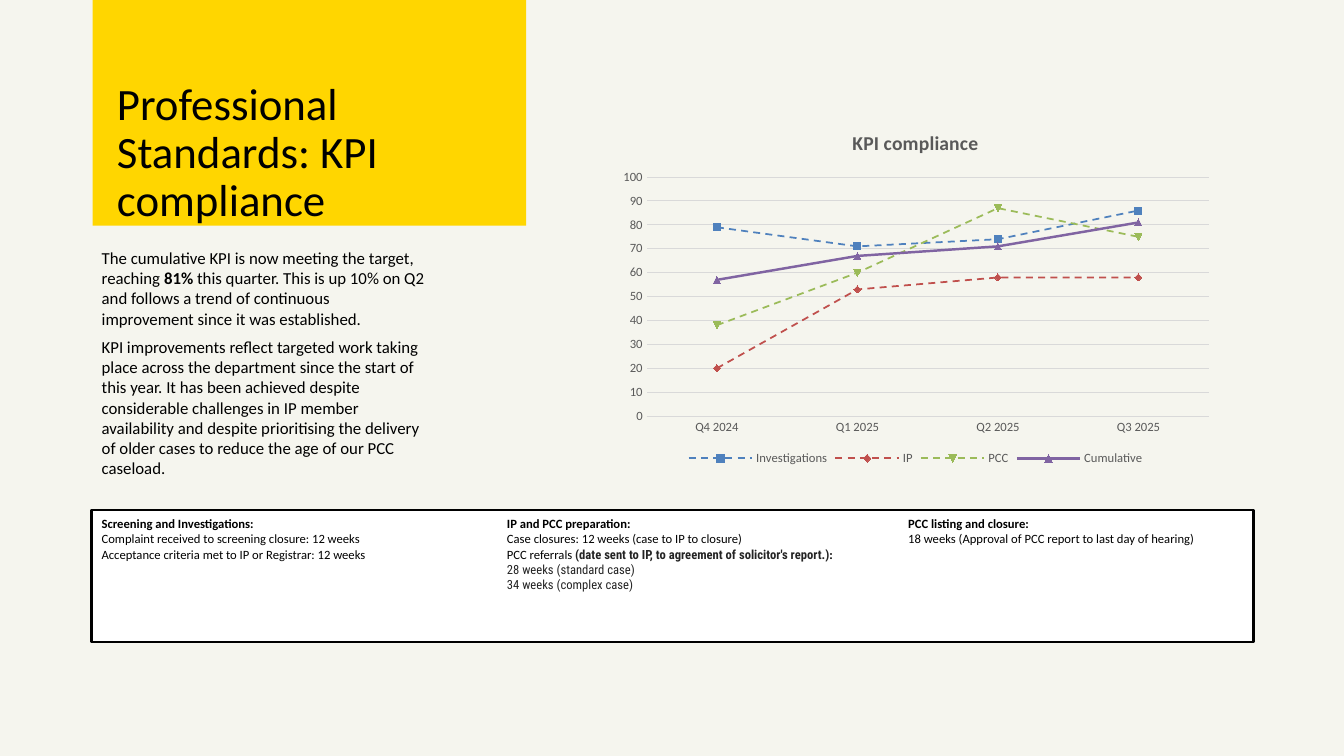
from lxml import etree
from pptx import Presentation
from pptx.chart.data import CategoryChartData
from pptx.dml.color import RGBColor
from pptx.enum.chart import XL_CHART_TYPE, XL_LEGEND_POSITION, XL_TICK_MARK
from pptx.enum.dml import MSO_LINE
from pptx.enum.shapes import MSO_SHAPE
from pptx.enum.text import MSO_ANCHOR, PP_ALIGN
from pptx.oxml.ns import qn
from pptx.util import Inches, Pt

LINE = XL_CHART_TYPE.LINE
BELOW = XL_LEGEND_POSITION.BOTTOM
NONE = XL_TICK_MARK.NONE
DASH = MSO_LINE.DASH
RECT = MSO_SHAPE.RECTANGLE
TOP, BOTTOM = MSO_ANCHOR.TOP, MSO_ANCHOR.BOTTOM
LEFT = PP_ALIGN.LEFT

FONT, NARROW = "Calibri", "Roboto Condensed"
BLACK, INK, GREY, RULE = "000000", "242424", "595959", "D9D9D9"

QUARTERS = ["Q4 2024", "Q1 2025", "Q2 2025", "Q3 2025"]
SERIES = [
    ("Investigations", [79, 71, 74, 86], "4F81BD"),
    ("IP", [20, 53, 58, 58], "C0504D"),
    ("PCC", [38, 60, 87, 75], "9BBB59"),
    ("Cumulative", [57, 67, 71, 81], "8064A2"),
]
STORY = [
    [("The cumulative KPI is now meeting the target, reaching ",), ("81% ", True),
     ("this quarter. This is up 10% on Q2 and follows a trend of continuous "
      "improvement since it was established.",)],
    [("KPI improvements reflect targeted work taking place across the department "
      "since the start of this year. It has been achieved despite considerable "
      "challenges in IP member availability and despite prioritising the delivery "
      "of older cases to reduce the age of our PCC caseload.",)],
]
TARGETS = [
    (0, 4, [
        [("Screening and Investigations:", True)],
        [("Complaint received to screening closure: 12 weeks",)],
        [("Acceptance criteria met to IP or Registrar: 12 weeks",)],
    ]),
    (4.02, 3.9, [
        [("IP and PCC preparation:", True)],
        [("Case closures: 12 weeks (case to IP to closure)",)],
        [("PCC referrals ",),
         ("(date sent to IP, to agreement of solicitor's report.)", True, NARROW, INK),
         (":", True)],
        [("28 weeks (standard case)", False, NARROW, INK)],
        [("34 weeks (complex case)", False, NARROW, INK)],
    ]),
    (8, 3.5, [
        [("PCC listing and closure:", True)],
        [("18 weeks (Approval of PCC report to last day of hearing)",)],
    ]),
]


def rgb(code):
    return RGBColor.from_string(code)


def style(font, size, color=BLACK, bold=False, name=FONT):
    font.name, font.size, font.bold = name, Pt(size), bold
    font.color.rgb = rgb(color)


def write(frame, paras, size, after=0, lead=None):
    frame.word_wrap = True
    for i, runs in enumerate(paras):
        para = frame.add_paragraph() if i else frame.paragraphs[0]
        para.alignment = LEFT
        para.space_after = Pt(after)
        if lead:
            para.line_spacing = Pt(lead)
        for text, bold, name, color in (r + (False, FONT, BLACK)[len(r) - 1:] for r in runs):
            run = para.add_run()
            run.text = text
            style(run.font, size, color, bold, name)


def inset(frame, left, top, right, bottom):
    frame.margin_left, frame.margin_top = Inches(left), Inches(top)
    frame.margin_right, frame.margin_bottom = Inches(right), Inches(bottom)


def panel(slide, box, fill):
    shape = slide.shapes.add_shape(RECT, *map(Inches, box))
    shape.shadow.inherit = False
    shape.fill.solid()
    shape.fill.fore_color.rgb = rgb(fill)
    shape.line.fill.background()
    return shape


def title(slide, box):
    frame = panel(slide, box, "FFD600").text_frame
    inset(frame, 0.24, 0, 0, 0)
    frame.vertical_anchor = BOTTOM
    write(frame, [[("Professional Standards: ",), ("KPI compliance",)]], 32, lead=34.5)


def story(slide, box):
    frame = slide.shapes.add_textbox(*map(Inches, box)).text_frame
    inset(frame, 0.1, 0.05, 0.1, 0.05)
    write(frame, STORY, 12, after=6)


def targets(slide, box):
    x, y, _, high = box
    frame = panel(slide, box, "FFFFFF")
    frame.line.color.rgb = rgb(BLACK)
    frame.line.width = Pt(2)
    for shift, wide, paras in TARGETS:
        area = slide.shapes.add_textbox(*map(Inches, (x + shift, y, wide, high)))
        inset(area.text_frame, 0.1, 0.06, 0, 0.05)
        area.text_frame.vertical_anchor = TOP
        write(area.text_frame, paras, 9)


def place(plot, **sizes):
    old = plot.find(qn("c:layout"))
    if old is not None:
        plot.remove(old)
    layout = etree.Element(qn("c:layout"))
    plot.insert(0, layout)
    manual = etree.SubElement(layout, qn("c:manualLayout"))
    modes = dict(layoutTarget="inner", xMode="edge", yMode="edge")
    for key, val in {**modes, **sizes}.items():
        etree.SubElement(manual, qn("c:" + key)).set("val", str(val))


def graph(slide, box):
    data = CategoryChartData()
    data.categories = QUARTERS
    for name, vals, _ in SERIES:
        data.add_series(name, vals)
    chart = slide.shapes.add_chart(LINE, *map(Inches, box), data).chart
    style(chart.font, 10)
    chart.has_title = True
    run = chart.chart_title.text_frame.paragraphs[0].add_run()
    run.text = "KPI compliance"
    style(run.font, 14, GREY, True)
    chart.has_legend = True
    chart.legend.position = BELOW
    chart.legend.include_in_layout = False
    style(chart.legend.font, 9, GREY)

    cats, vals = chart.category_axis, chart.value_axis
    for axis in (cats, vals):
        axis.major_tick_mark = axis.minor_tick_mark = NONE
        style(axis.tick_labels.font, 9, GREY)
    vals.minimum_scale, vals.maximum_scale, vals.major_unit = 0, 100, 10
    vals.format.line.fill.background()
    for line in (cats.format.line, vals.major_gridlines.format.line):
        line.color.rgb = rgb(RULE)
        line.width = Pt(0.75)

    plot = chart.plots[0]
    plot.vary_by_categories = False
    for series, (name, _, color) in zip(plot.series, SERIES):
        series.smooth = False
        series.marker.style = None
        line = series.format.line
        line.color.rgb = rgb(color)
        line.width = Pt(1.75 if name == "Cumulative" else 1.25)
        if name != "Cumulative":
            line.dash_style = DASH
    area = chart.element.find(".//" + qn("c:plotArea"))
    place(area, x=0.06, y=0.18, w=0.92, h=0.67)


def main():
    deck = Presentation()
    deck.slide_width, deck.slide_height = Inches(13.33), Inches(7.5)
    slide = deck.slides.add_slide(deck.slide_layouts[6])
    fill = slide.background.fill
    fill.solid()
    fill.fore_color.rgb = rgb("F5F5EE")
    title(slide, (0.92, 0, 4.3, 2.24))
    graph(slide, (6.05, 1.12, 6.06, 3.54))
    story(slide, (0.91, 2.41, 3.41, 2.4))
    targets(slide, (0.91, 5.06, 11.52, 1.31))
    deck.save("out.pptx")


if __name__ == "__main__":
    main()
